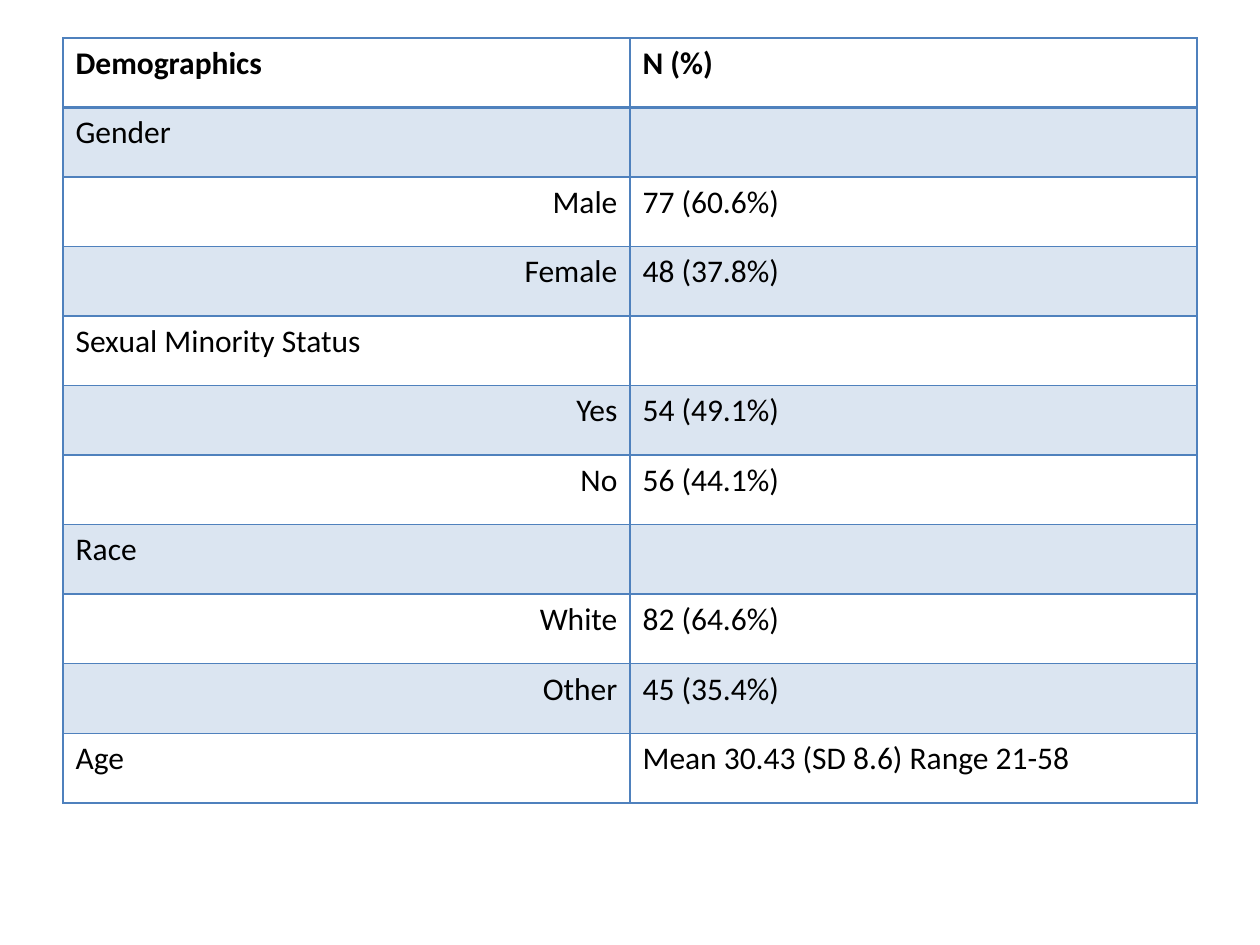
from dataclasses import dataclass

from lxml import etree
from pptx import Presentation
from pptx import util as u
from pptx.dml import color
from pptx.enum import text
from pptx.oxml import ns


@dataclass(frozen=True)
class Theme:
    font: str = "Calibri"
    size: int = 18
    ink: str = "000000"
    accent: str = "4F81BD"
    band_alpha: int = 20
    rule: int = 1
    header_rule: int = 2


THEME = Theme()
WIDTH, HEIGHT = u.Inches(10), u.Inches(7.5)
LEFT, TOP, TABLE_W, TABLE_H = 0.05, 0.04, 0.9, 0.81

ROWS = [
    ("Demographics", "N (%)"),
    ("Gender", ""),
    ("Male", "77 (60.6%)"),
    ("Female", "48 (37.8%)"),
    ("Sexual Minority Status", ""),
    ("Yes", "54 (49.1%)"),
    ("No", "56 (44.1%)"),
    ("Race", ""),
    ("White", "82 (64.6%)"),
    ("Other", "45 (35.4%)"),
    ("Age", "Mean 30.43 (SD 8.6) Range 21-58"),
]
GROUP_ROWS = {"Demographics", "Gender", "Sexual Minority Status", "Race", "Age"}


def add_child(parent, tag, **attrs):
    return etree.SubElement(parent, ns.qn(tag), {k: str(v) for k, v in attrs.items()})


def set_borders(cell, widths):
    tc_pr = cell._tc.get_or_add_tcPr()
    for side in "LRTB":
        ln = add_child(tc_pr, f"a:ln{side}", w=u.Pt(widths.get(side, THEME.rule)))
        add_child(add_child(ln, "a:solidFill"), "a:srgbClr", val=THEME.accent)


def set_fill(cell, banded):
    if not banded:
        cell.fill.background()
        return
    cell.fill.solid()
    cell.fill.fore_color.rgb = color.RGBColor.from_string(THEME.accent)
    clr = cell._tc.tcPr.find(ns.qn("a:solidFill")).find(ns.qn("a:srgbClr"))
    add_child(clr, "a:alpha", val=THEME.band_alpha * 1000)


def set_text(cell, words, bold, align):
    p = cell.text_frame.paragraphs[0]
    p.alignment = align
    fmt = {"name": THEME.font, "size": u.Pt(THEME.size), "bold": bold}
    fonts = [p.font]
    if words:
        r = p.add_run()
        r.text = words
        fonts.append(r.font)
    for font in fonts:
        for key, value in fmt.items():
            setattr(font, key, value)
        font.color.rgb = color.RGBColor.from_string(THEME.ink)


def add_demographics(s):
    frame = s.shapes.add_table(
        len(ROWS), len(ROWS[0]), int(WIDTH * LEFT), int(HEIGHT * TOP),
        int(WIDTH * TABLE_W), int(HEIGHT * TABLE_H))
    table = frame.table
    table.horz_banding = False
    for i, row in enumerate(ROWS):
        widths = {0: {"B": THEME.header_rule}, 1: {"T": THEME.header_rule}}.get(i, {})
        for j, words in enumerate(row):
            cell = table.cell(i, j)
            indented = j == 0 and words not in GROUP_ROWS
            align = text.PP_ALIGN.RIGHT if indented else text.PP_ALIGN.LEFT
            set_borders(cell, widths)
            set_fill(cell, i % 2 == 1)
            set_text(cell, words, i == 0, align)


def main():
    prs = Presentation()
    prs.slide_width, prs.slide_height = WIDTH, HEIGHT
    s = prs.slides.add_slide(prs.slide_layouts[6])
    add_demographics(s)
    prs.save("out.pptx")


if __name__ == "__main__":
    main()
